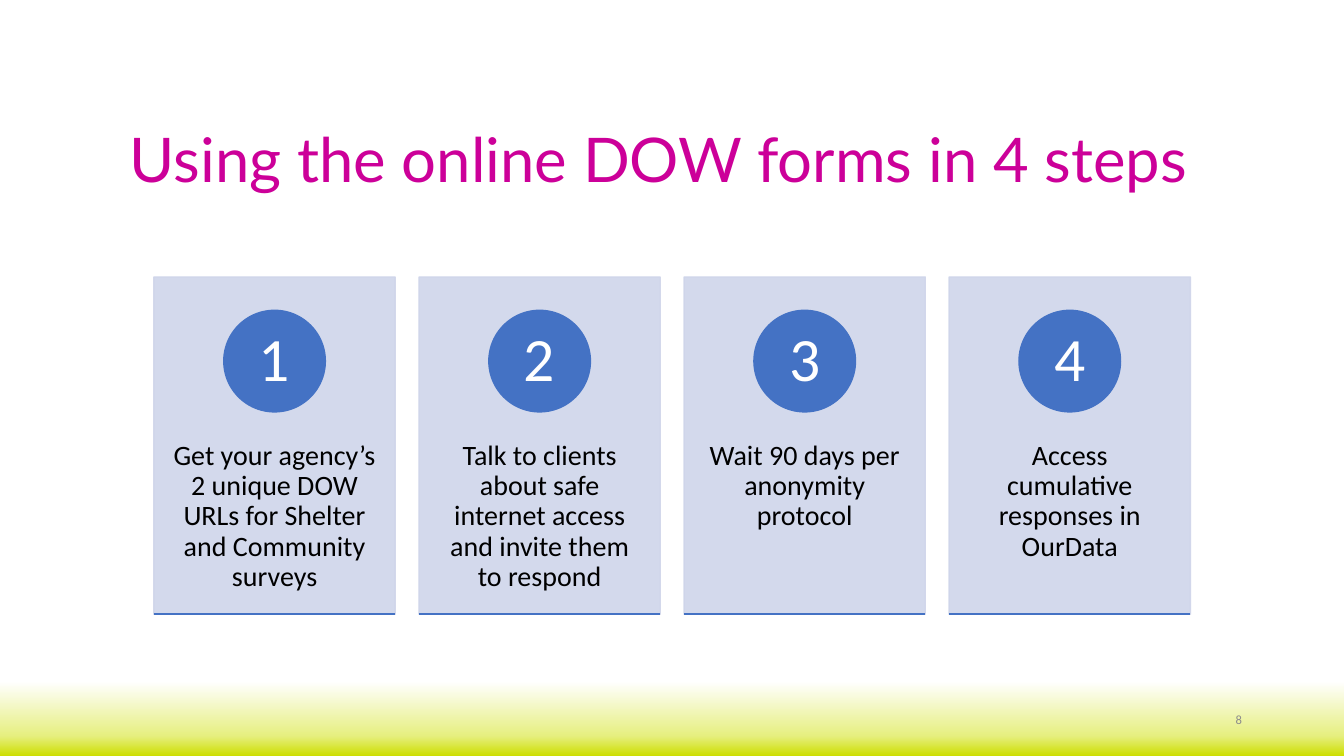
from copy import deepcopy
from dataclasses import dataclass

from lxml import etree
from pptx import Presentation
from pptx.dml.color import RGBColor
from pptx.enum import shapes, text
from pptx.oxml import ns
from pptx.util import Cm, Pt


@dataclass(frozen=True)
class Theme:
    title: RGBColor = RGBColor(0xCC, 0x00, 0x99)
    body: RGBColor = RGBColor(0x00, 0x00, 0x00)
    page_number: RGBColor = RGBColor(0x8C, 0x8C, 0x8C)
    white: RGBColor = RGBColor(0xFF, 0xFF, 0xFF)
    card: RGBColor = RGBColor(0xCF, 0xD5, 0xEA)
    accent: RGBColor = RGBColor(0x44, 0x72, 0xC4)
    pale_lime: RGBColor = RGBColor(0xE6, 0xEF, 0x80)
    lime: RGBColor = RGBColor(0xCD, 0xDE, 0x01)
    title_font: str = "Lato"
    body_font: str = "Calibri"
    large: float = 44
    medium: float = 20
    small: float = 9


@dataclass(frozen=True)
class Area:
    left: float
    top: float
    width: float
    height: float

    def lengths(self) -> tuple:
        return Cm(self.left), Cm(self.top), Cm(self.width), Cm(self.height)


@dataclass(frozen=True)
class Step:
    number: int
    message: str


THEME = Theme()
PAGE_WIDTH, PAGE_HEIGHT = 33.87, 19.05
CARD = Area(3.88, 6.98, 6.08, 8.5)
CARD_PITCH = 6.68
CIRCLE_SIZE, CIRCLE_TOP = 2.56, 7.82
MESSAGE_TOP, MESSAGE_HEIGHT = 10.21, 5.1

STEPS = [
    Step(1, "Get your agency’s 2 unique DOW URLs for Shelter and Community surveys"),
    Step(2, "Talk to clients about safe internet access and invite them to respond"),
    Step(3, "Wait 90 days per anonymity protocol"),
    Step(4, "Access cumulative responses in OurData"),
]


def write(box, words: str, *, size: float, color: RGBColor,
          font: str = THEME.body_font, align=text.PP_ALIGN.CENTER,
          anchor=text.MSO_ANCHOR.MIDDLE,
          inset: tuple[float, float] = (0.25, 0.13)) -> None:
    """Fill a box with one paragraph; inset is (horizontal, vertical) in cm."""
    frame = box.text_frame
    frame.word_wrap = True
    frame.auto_size = text.MSO_AUTO_SIZE.NONE
    frame.vertical_anchor = anchor
    frame.margin_left = frame.margin_right = Cm(inset[0])
    frame.margin_top = frame.margin_bottom = Cm(inset[1])
    para = frame.paragraphs[0]
    para.alignment = align
    para.line_spacing = 0.9
    span = para.add_run()
    span.text = words
    span.font.name = font
    span.font.size = Pt(size)
    span.font.color.rgb = color


def add_text(page, area: Area, words: str, **style) -> None:
    write(page.shapes.add_textbox(*area.lengths()), words, **style)


def add_solid(page, kind, area: Area, color: RGBColor):
    shape = page.shapes.add_shape(kind, *area.lengths())
    shape.shadow.inherit = False
    shape.fill.solid()
    shape.fill.fore_color.rgb = color
    shape.line.color.rgb = color
    shape.line.width = Pt(1)
    return shape


def set_opacity(shape, percent: int) -> None:
    for color in shape._element.spPr.iter(ns.qn("a:srgbClr")):
        etree.SubElement(color, ns.qn("a:alpha"), val=str(percent * 1000))


def add_footer_band(page) -> None:
    area = Area(0, 17.17, PAGE_WIDTH, PAGE_HEIGHT - 17.17)
    band = page.shapes.add_shape(shapes.MSO_SHAPE.RECTANGLE, *area.lengths())
    band.shadow.inherit = False
    band.line.fill.background()
    band.fill.gradient()
    band.fill.gradient_angle = 270
    stop_list = next(band._element.spPr.iter(ns.qn("a:gsLst")))
    stop_list.append(deepcopy(stop_list[0]))
    colors = [(0, THEME.white), (0.73, THEME.pale_lime), (1, THEME.lime)]
    for stop, (position, color) in zip(band.fill.gradient_stops, colors):
        stop.position = position
        stop.color.rgb = color


def add_baseline(page, left: float) -> None:
    y = Cm(CARD.top + CARD.height)
    line = page.shapes.add_connector(
        shapes.MSO_CONNECTOR.STRAIGHT, Cm(left), y, Cm(left + CARD.width), y)
    line.line.color.rgb = THEME.accent
    line.line.width = Pt(1.5)
    etree.SubElement(line._element.spPr, ns.qn("a:effectLst"))


def add_step(page, step: Step, left: float) -> None:
    card = add_solid(page, shapes.MSO_SHAPE.RECTANGLE,
                     Area(left, CARD.top, CARD.width, CARD.height), THEME.card)
    set_opacity(card, 90)
    add_text(page, Area(left, MESSAGE_TOP, CARD.width, MESSAGE_HEIGHT),
             step.message, size=THEME.medium, color=THEME.body,
             anchor=text.MSO_ANCHOR.TOP, inset=(0.48, 0.91))
    circle_left = left + (CARD.width - CIRCLE_SIZE) / 2
    circle = add_solid(page, shapes.MSO_SHAPE.OVAL,
                       Area(circle_left, CIRCLE_TOP, CIRCLE_SIZE, CIRCLE_SIZE),
                       THEME.accent)
    write(circle, str(step.number), size=THEME.large, color=THEME.white,
          inset=(0.2, 0.03))
    add_baseline(page, left)


def add_title(page, words: str) -> None:
    title = page.shapes.title
    title.left, title.top, title.width, title.height = Area(2, 2.26, 29.21, 3.68).lengths()
    write(title, words, size=THEME.large, color=THEME.title, font=THEME.title_font)


def main() -> None:
    deck = Presentation()
    deck.slide_width, deck.slide_height = Cm(PAGE_WIDTH), Cm(PAGE_HEIGHT)
    page = deck.slides.add_slide(deck.slide_layouts.get_by_name("Title Only"))
    add_footer_band(page)
    add_title(page, "Using the online DOW forms in 4 steps")
    add_text(page, Area(23.93, 17.65, 7.62, 1.02), "8", size=THEME.small,
             color=THEME.page_number, align=text.PP_ALIGN.RIGHT)
    for index, step in enumerate(STEPS):
        add_step(page, step, CARD.left + index * CARD_PITCH)
    deck.save("out.pptx")


if __name__ == "__main__":
    main()
